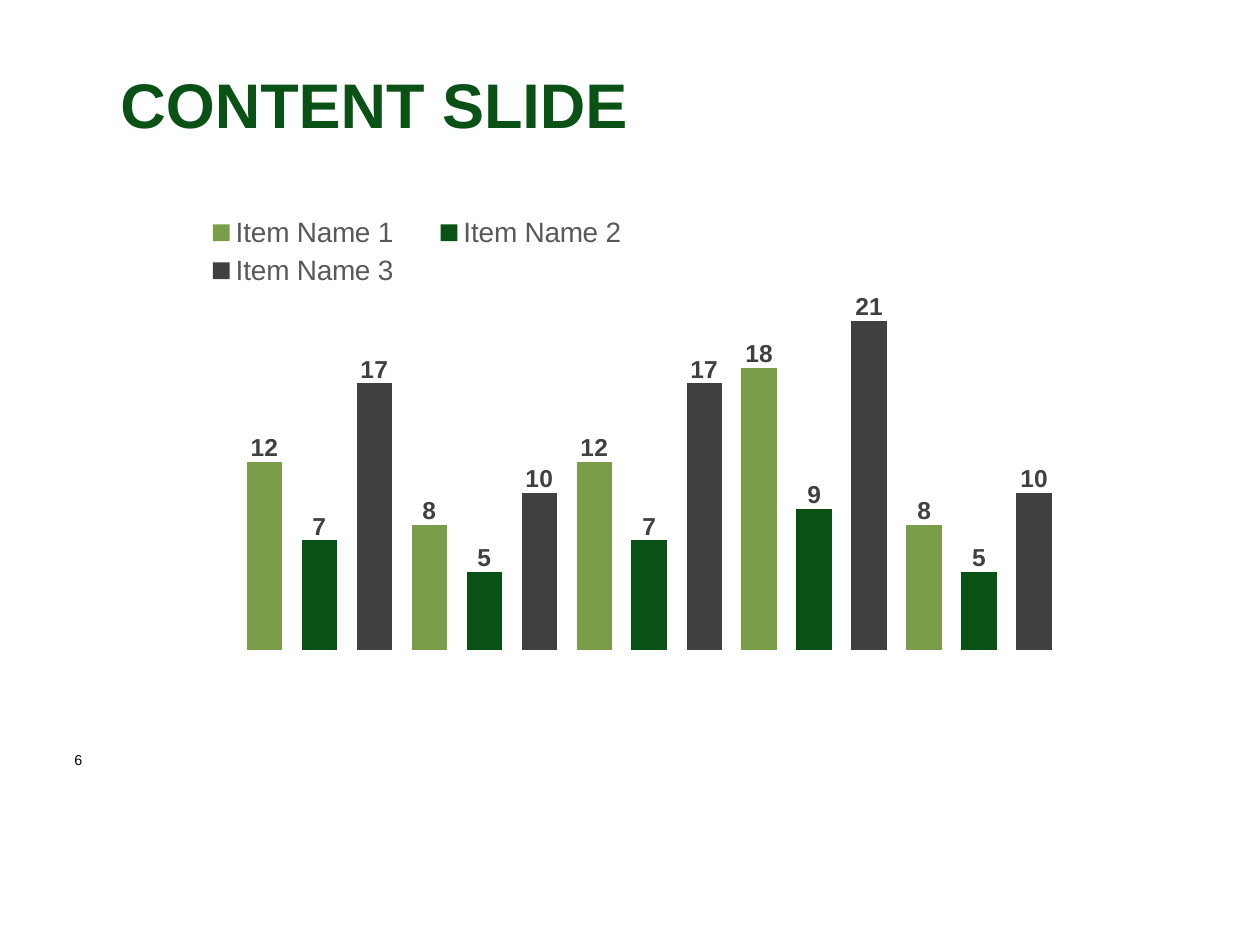
import pptx
import pptx.chart.data
import pptx.dml.color
import pptx.enum.chart
import pptx.enum.text
import pptx.oxml
import pptx.oxml.ns
import pptx.util

PX = 914400 / 126
COLORS = {"dark_green": "095115", "light_green": "799D49", "charcoal": "404041",
          "label": "404040", "legend": "595959", "black": "000000"}
FONT = "Arial"
qn = pptx.oxml.ns.qn


def add_text(text, x, y, w, h, size, color, bold=False, anchor="TOP"):
    sp = s.shapes.add_textbox(*[round(v * PX) for v in (x, y, w, h)])
    tf = sp.text_frame
    tf.word_wrap = True
    tf.vertical_anchor = getattr(pptx.enum.text.MSO_ANCHOR, anchor)
    r = tf.paragraphs[0].add_run()
    r.text = text
    r.font.name, r.font.size, r.font.bold = FONT, pptx.util.Pt(size), bold
    r.font.color.rgb = pptx.dml.color.RGBColor.from_string(COLORS[color])


def set_layout(parent, index, **parts):
    for old in parent.findall(qn("c:layout")):
        parent.remove(old)
    body = "".join(f'<c:{k} val="{v}"/>' for k, v in parts.items())
    parent.insert(index, pptx.oxml.parse_xml(
        f'<c:layout {pptx.oxml.ns.nsdecls("c")}><c:manualLayout>{body}'
        '</c:manualLayout></c:layout>'))


prs = pptx.Presentation()
prs.slide_width, prs.slide_height = round(1260 * PX), round(945 * PX)
s = prs.slides.add_slide(prs.slide_layouts[6])

# Slide number
add_text("6", 62, 745, 54, 50, size=8.2, color="black")

# Chart data: the items take turns, one column each
items = [("Item Name 3", 2, [17, 10, 17, 21, 10], "charcoal"),
         ("Item Name 2", 1, [7, 5, 7, 9, 5], "dark_green"),
         ("Item Name 1", 0, [12, 8, 12, 18, 8], "light_green")]
data = pptx.chart.data.CategoryChartData()
data.categories = [str(n) for n in range(1, 16)]
for name, start, values, _ in items:
    column = [None] * 15
    column[start::3] = values
    data.add_series(name, column)

# Chart
chart = s.shapes.add_chart(
    pptx.enum.chart.XL_CHART_TYPE.COLUMN_STACKED,
    *[round(v * PX) for v in (146, 205, 968, 467)], data).chart
chart.has_title = False
chart.font.name, chart.font.size = FONT, pptx.util.Pt(10)
chart.category_axis.visible = False
chart.value_axis.visible = False
chart.value_axis.has_major_gridlines = False
chart.value_axis.minimum_scale, chart.value_axis.maximum_scale = 0, 25
plot = chart.plots[0]
plot.gap_width, plot.overlap = 55, 100
plot.vary_by_categories = False
plot_area = chart.element.find(".//" + qn("c:plotArea"))
set_layout(plot_area, 0, layoutTarget="inner", xMode="edge", yMode="edge",
           x=0.094, y=0.113, w=0.852, h=0.841)

# Columns, with each value lifted above its column
for ser, (_, start, values, color) in zip(plot.series, items):
    ser.format.fill.solid()
    ser.format.fill.fore_color.rgb = pptx.dml.color.RGBColor.from_string(COLORS[color])
    for i in range(start, 15, 3):
        label = ser.points[i].data_label
        label.position = pptx.enum.chart.XL_LABEL_POSITION.INSIDE_END
        label.font.name, label.font.size = FONT, pptx.util.Pt(14)
        label.font.bold = True
        label.font.color.rgb = pptx.dml.color.RGBColor.from_string(COLORS["label"])
    for d_lbl in ser._element.iter(qn("c:dLbl")):
        set_layout(d_lbl, 1, x=0, y=-0.07)

# Legend
chart.has_legend = True
legend = chart.legend
legend.position = pptx.enum.chart.XL_LEGEND_POSITION.RIGHT
legend.include_in_layout = False
legend.font.name, legend.font.size = FONT, pptx.util.Pt(16)
legend.font.color.rgb = pptx.dml.color.RGBColor.from_string(COLORS["legend"])
set_layout(legend._element, 1, xMode="edge", yMode="edge", x=0.03, y=0.01, w=0.5, h=0.18)

# Title
add_text("CONTENT SLIDE", 108, 55, 1043, 96, size=36, color="dark_green",
         bold=True, anchor="MIDDLE")

prs.save("out.pptx")
